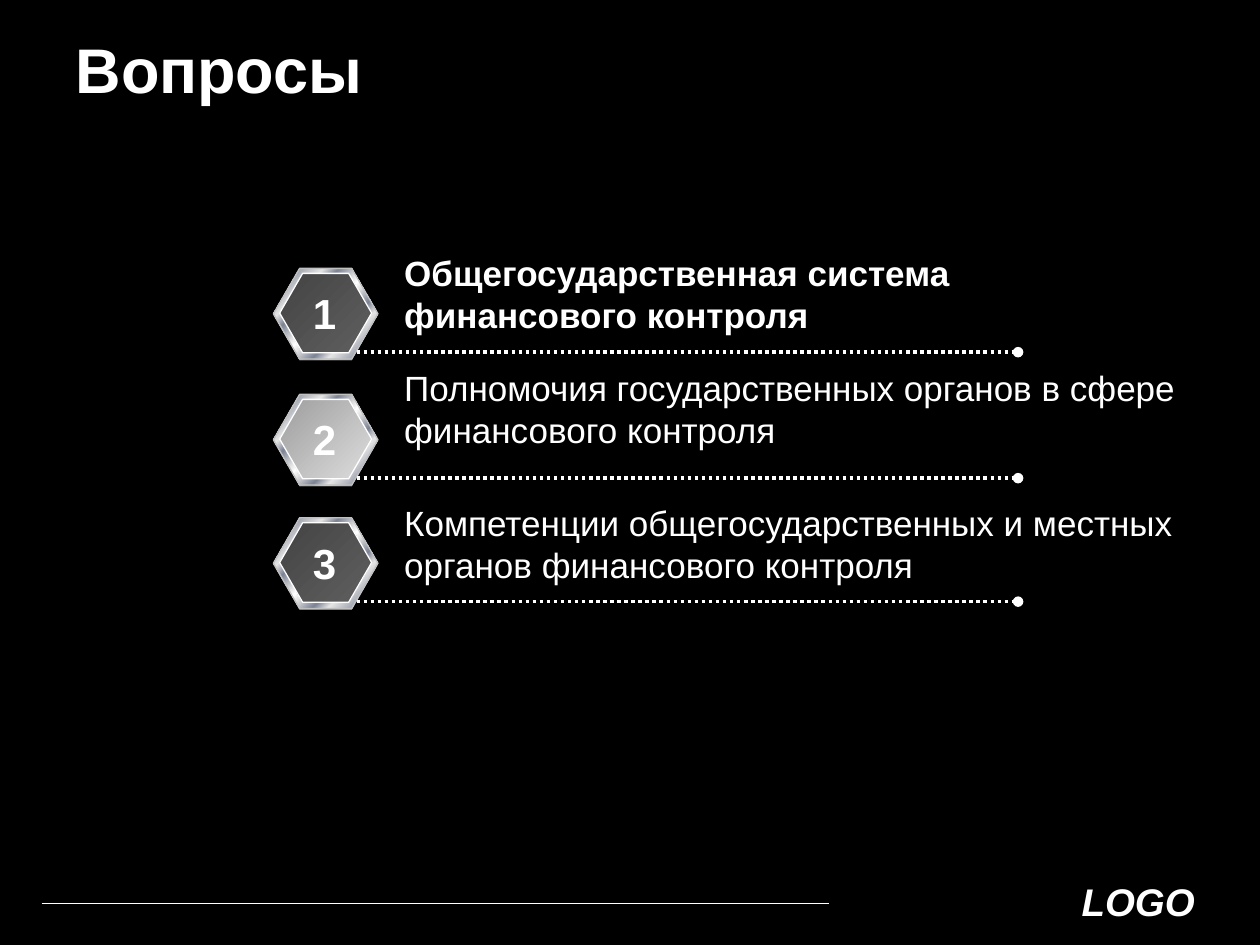
from pptx import Presentation
from pptx.dml.color import RGBColor
from pptx.enum.dml import MSO_LINE
from pptx.enum.shapes import MSO_CONNECTOR, MSO_SHAPE
from pptx.enum.text import MSO_ANCHOR, MSO_AUTO_SIZE, PP_ALIGN
from pptx.oxml.ns import qn
from pptx.oxml.xmlchemy import OxmlElement
from pptx.util import Inches, Pt

HEXAGON = MSO_SHAPE.HEXAGON
STRAIGHT = MSO_CONNECTOR.STRAIGHT
DOTTED = MSO_LINE.ROUND_DOT  # written as sysDot
LEFT, CENTER, RIGHT = PP_ALIGN.LEFT, PP_ALIGN.CENTER, PP_ALIGN.RIGHT
MIDDLE, TOP = MSO_ANCHOR.MIDDLE, MSO_ANCHOR.TOP
FIXED, GROW = MSO_AUTO_SIZE.NONE, MSO_AUTO_SIZE.SHAPE_TO_FIT_TEXT

COLUMNS, ROWS = 100, 75
WHITE, BLACK = "FFFFFF", "000000"
METAL = [(0, "E6E6E6"), (7, "7D8496"), (26, "E6E6E6"), (34, "7D8496"),
         (46, "E6E6E6"), (50, "FFFFFF"), (54, "E6E6E6"), (66, "7D8496"),
         (74, "E6E6E6"), (93, "7D8496"), (100, "E6E6E6")]
DARK = [(0, "444444"), (100, "5F5F5F")]
LIGHT = [(0, "9E9E9E"), (100, "DDDDDD")]

# Badge row, badge fill, text row, text width, bold, wrap, lines
QUESTIONS = [
    (21.3, DARK, 19.5, 45.6, True, False,
     ["Общегосударственная система", "финансового контроля"]),
    (31.3, LIGHT, 28.6, 67.7, False, True,
     ["Полномочия государственных органов в сфере", "финансового контроля"]),
    (41.1, DARK, 39.3, 63.4, False, False,
     ["Компетенции общегосударственных и местных", "органов финансового контроля"]),
]


def color(hex_string):
    return RGBColor.from_string(hex_string)


class SlideBuilder:
    """Places styled elements on a grid of COLUMNS by ROWS."""

    font_name = "Arial"

    def __init__(self, presentation):
        self.column = presentation.slide_width / COLUMNS
        self.row = presentation.slide_height / ROWS
        self.slide = presentation.slides.add_slide(presentation.slide_layouts[5])
        background = self.slide.background.fill
        background.solid()
        background.fore_color.rgb = color(BLACK)

    def grid(self, *lengths):
        """Turn alternating columns and rows into slide lengths."""
        return [round(length * (self.row if index % 2 else self.column))
                for index, length in enumerate(lengths)]

    def set_text(self, shape, lines, align=LEFT, anchor=TOP, wrap=True, resize=GROW, **font):
        frame = shape.text_frame
        frame.text = "\n".join(lines)
        frame.word_wrap = wrap
        frame.auto_size = resize
        frame.vertical_anchor = anchor
        for paragraph in frame.paragraphs:
            paragraph.alignment = align
            paragraph.font.color.rgb = color(WHITE)
            for name, value in {"name": self.font_name, **font}.items():
                setattr(paragraph.font, name, value)

    def title(self, box, text, **style):
        shape = self.slide.shapes.title
        shape.left, shape.top, shape.width, shape.height = self.grid(*box)
        self.set_text(shape, [text], anchor=MIDDLE, resize=FIXED, **style)

    def text(self, box, lines, **style):
        self.set_text(self.slide.shapes.add_textbox(*self.grid(*box)), lines, **style)

    def line(self, left, right, row, width, dash=None, oval_end=False):
        connector = self.slide.shapes.add_connector(
            STRAIGHT, *self.grid(left, row, right, row))
        connector.line.color.rgb = color(WHITE)
        connector.line.width = Pt(width)
        if dash:
            connector.line.dash_style = dash
        properties = connector._element.spPr
        if oval_end:
            tail = OxmlElement("a:tailEnd")
            tail.set("type", "oval")
            properties.find(qn("a:ln")).append(tail)
        properties.append(OxmlElement("a:effectLst"))

    def gradient(self, shape, stops, degrees=45):
        """Fill with any number of stops, turned clockwise."""
        shape.fill.gradient()
        fill = shape._element.spPr.find(qn("a:gradFill"))
        stop_list = fill.find(qn("a:gsLst"))
        stop_list.clear()
        for percent, hex_string in stops:
            stop = OxmlElement("a:gs")
            stop.set("pos", str(percent * 1000))
            stop_color = OxmlElement("a:srgbClr")
            stop_color.set("val", hex_string)
            stop.append(stop_color)
            stop_list.append(stop)
        fill.find(qn("a:lin")).set("ang", str(degrees * 60000))

    def hexagon(self, group, box, fill, outline=None):
        shape = group.shapes.add_shape(HEXAGON, *self.grid(*box))
        shape.shadow.inherit = False
        shape.adjustments[0], shape.adjustments[1] = 0.289, 1.155
        if isinstance(fill, str):
            shape.fill.solid()
            shape.fill.fore_color.rgb = color(fill)
        else:
            self.gradient(shape, fill)
        if outline:
            shape.line.color.rgb = color(outline)
            shape.line.width = Pt(0.75)
        else:
            shape.line.fill.background()

    def badge(self, row, fill):
        """Group a shaded edge, a metal rim and a coloured face."""
        group = self.slide.shapes.add_group_shape()
        self.hexagon(group, (21.7, row + 0.1, 8.3, 7.2), "808080")
        self.hexagon(group, (21.7, row, 8.3, 7.2), METAL, "C0C0C0")
        self.hexagon(group, (22.2, row + 0.4, 7.3, 6.3), fill, WHITE)


def main():
    presentation = Presentation()
    presentation.slide_width, presentation.slide_height = Inches(10), Inches(7.5)
    builder = SlideBuilder(presentation)
    builder.text((80.7, 69.2, 15.1, 4.7), ["LOGO"], align=RIGHT,
                 size=Pt(22), bold=True, italic=True)
    builder.line(3.3, 65.8, 71.7, 0.5)
    builder.title((5, 2.9, 79.6, 5), "Вопросы", size=Pt(36), bold=True)
    for number, question in enumerate(QUESTIONS, 1):
        row, fill, text_row, width, bold, wrap, lines = question
        builder.badge(row, fill)
        builder.line(28.3, 80.8, row + 6.65, 2, DOTTED, oval_end=True)
        builder.text((31.1, text_row, width, 7.7), lines, wrap=wrap,
                     size=Pt(20), bold=bold)
        builder.text((23.8, row + 1.05, 3.9, 5), [str(number)], align=CENTER,
                     wrap=False, size=Pt(24), bold=True)
    presentation.save("out.pptx")


if __name__ == "__main__":
    main()
